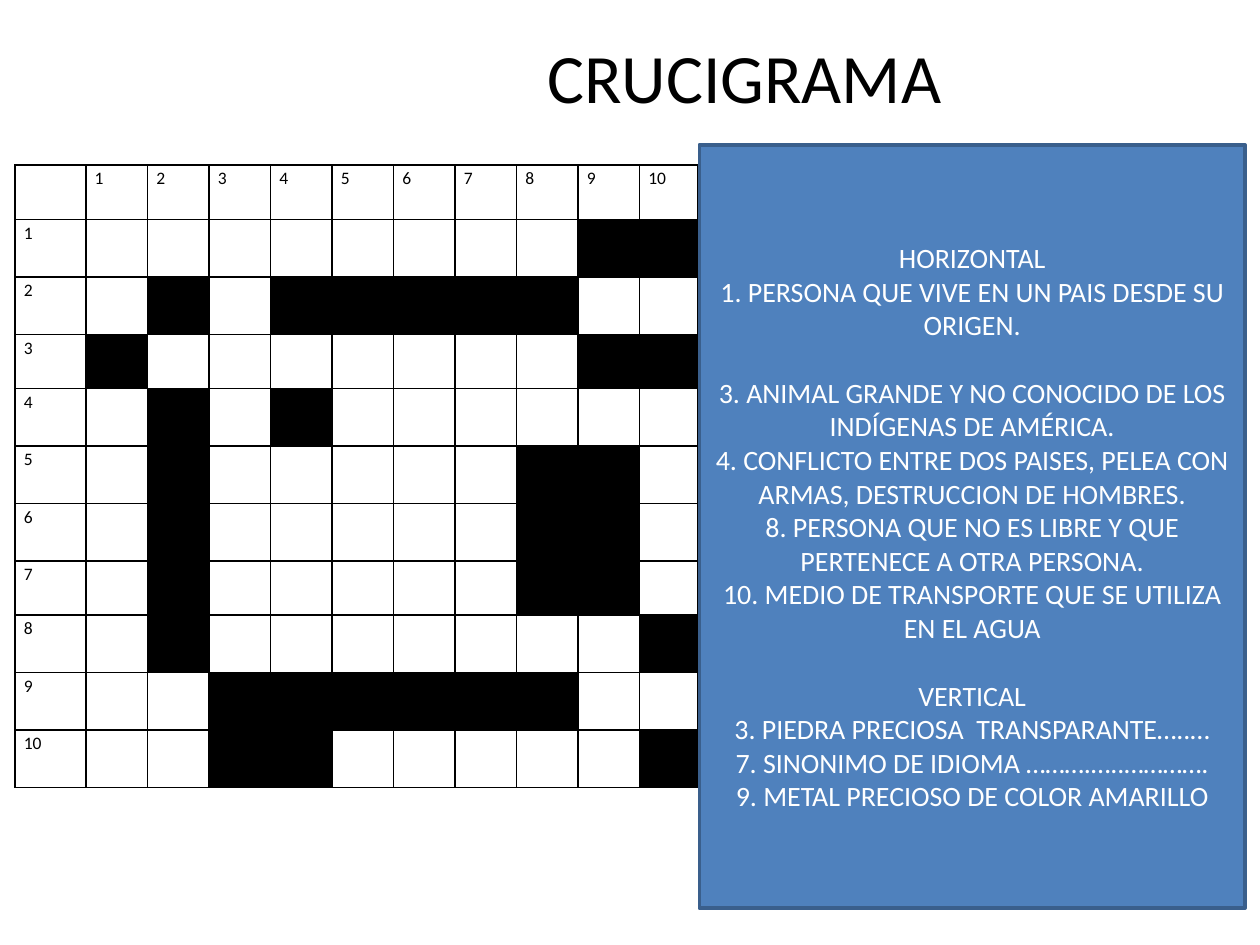
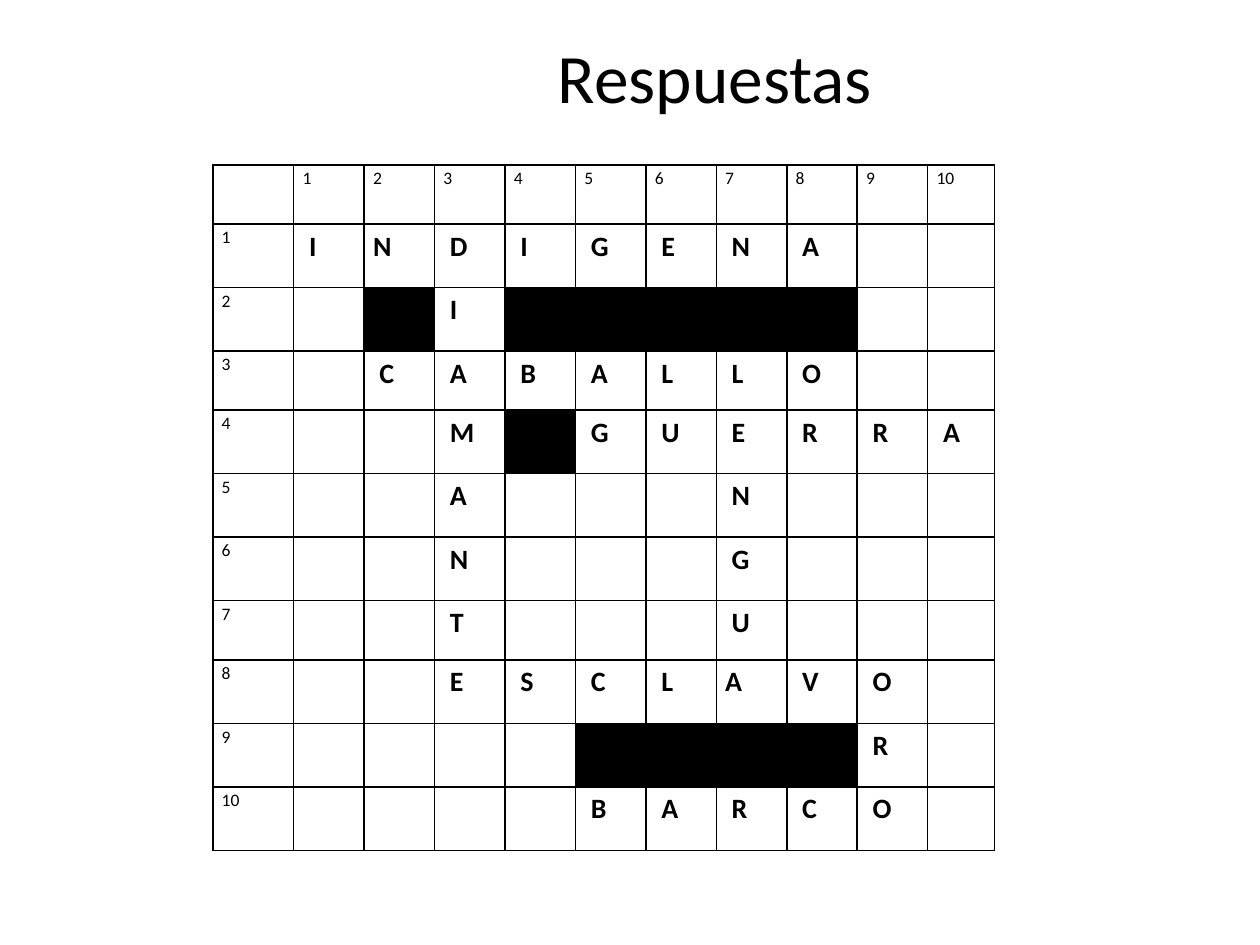
from lxml import etree
from pptx import Presentation
from pptx.dml.color import RGBColor
from pptx.enum import shapes, text
from pptx.oxml.ns import qn
from pptx.util import Cm, Pt

FONT = "Calibri"
BLACK, WHITE, BLUE, DARK_BLUE = "000000", "FFFFFF", "4F81BD", "3A5F8C"
BLACK_SQUARE, EMPTY_SQUARE = "#", "."
SHORT_ROWS = (0, 3, 7)
GRID_TOP = 3.33

CLUES = [
    ["HORIZONTAL",
     "1. PERSONA QUE VIVE EN UN PAIS DESDE SU ORIGEN."],
    ["3. ANIMAL GRANDE Y NO CONOCIDO DE LOS INDÍGENAS DE AMÉRICA.",
     "4. CONFLICTO ENTRE DOS PAISES, PELEA CON ARMAS, DESTRUCCION DE HOMBRES.",
     "8. PERSONA QUE NO ES LIBRE Y QUE PERTENECE A OTRA PERSONA.",
     "10. MEDIO DE TRANSPORTE QUE SE UTILIZA EN EL AGUA"],
    ["VERTICAL",
     "3. PIEDRA PRECIOSA  TRANSPARANTE…..…",
     "7. SINONIMO DE IDIOMA ……….…..………….",
     "9. METAL PRECIOSO DE COLOR AMARILLO"],
]

PUZZLE = {
    "title": "CRUCIGRAMA", "title_left": 5.89, "grid_left": 0.3,
    "columns": (1.43, 1.24, 1.17),  # number column, inner columns, last column
    "rows": (1.09, 1.16),  # short, tall
    "squares": [
        "........##",
        ".#.#####..",
        "#.......##",
        ".#.#......",
        ".#.....##.",
        ".#.....##.",
        ".#.....##.",
        ".#.......#",
        "..######..",
        "..##.....#",
    ],
    "flush": (), "clues": CLUES,
}
ANSWERS = {
    "title": "Respuestas", "title_left": 4.7, "grid_left": 4.29,
    "columns": (1.63, 1.42, 1.35),
    "rows": (1.19, 1.28),
    "squares": [
        "INDIGENA..",
        ".#I#####..",
        ".CABALLO..",
        "..M#GUERRA",
        "..A...N...",
        "..N...G...",
        "..T...U...",
        "..ESCLAVO.",
        "....####R.",
        "....BARCO.",
    ],
    "flush": ((1, 2), (8, 7)),  # letters set without the indent
    "clues": [],
}


def rgb(hex_color):
    return RGBColor.from_string(hex_color)


def style(paragraph, size, color=BLACK, bold=False):
    for run in paragraph.runs:
        run.font.name, run.font.size, run.font.bold = FONT, Pt(size), bold
        run.font.color.rgb = rgb(color)


def add_title(slide, title, left):
    box = slide.shapes.add_textbox(Cm(left), Cm(0.76), Cm(24.13 - left), Cm(1.55))
    frame = box.text_frame
    frame.word_wrap = True
    frame.vertical_anchor = text.MSO_ANCHOR.MIDDLE
    frame.text = title
    frame.paragraphs[0].alignment = text.PP_ALIGN.CENTER
    style(frame.paragraphs[0], 39.6)


def add_clues(slide, groups):
    panel = slide.shapes.add_shape(shapes.MSO_SHAPE.RECTANGLE,
                                   Cm(14.1), Cm(2.92), Cm(11), Cm(15.39))
    panel.shadow.inherit = False
    panel.fill.solid()
    panel.fill.fore_color.rgb = rgb(BLUE)
    panel.line.color.rgb = rgb(DARK_BLUE)
    panel.line.width = Pt(2)
    frame = panel.text_frame
    frame.word_wrap = True
    frame.vertical_anchor = text.MSO_ANCHOR.MIDDLE
    frame.text = "\n".join(clue for group in groups for clue in group)
    group_heads = [group[0] for group in groups[1:]]
    for paragraph in frame.paragraphs:
        paragraph.alignment = text.PP_ALIGN.CENTER
        if paragraph.text in group_heads:
            paragraph.space_before = Pt(19.5)
        style(paragraph, 16, WHITE)


def add_borders(cell):
    properties = cell._tc.get_or_add_tcPr()
    for position, side in enumerate(("lnL", "lnR", "lnT", "lnB")):
        line = etree.Element(qn(f"a:{side}"), w=str(Pt(1)))
        fill = etree.SubElement(line, qn("a:solidFill"))
        etree.SubElement(fill, qn("a:srgbClr"), val=BLACK)
        properties.insert(position, line)


def write(cell, content, size, bold=False, indent=0):
    cell.margin_left, cell.margin_right = Cm(0.18 + indent), Cm(0.18)
    cell.margin_top = cell.margin_bottom = 0
    cell.text_frame.text = content
    paragraph = cell.text_frame.paragraphs[0]
    paragraph.line_spacing = 1.15
    style(paragraph, size, bold=bold)


def add_crossword(slide, page):
    squares = page["squares"]
    count = len(squares) + 1
    first, inner, last = page["columns"]
    widths = [first] + [inner] * (count - 2) + [last]
    short, tall = page["rows"]
    heights = [short if row in SHORT_ROWS else tall for row in range(count)]
    grid = slide.shapes.add_table(count, count, Cm(page["grid_left"]), Cm(GRID_TOP),
                                  Cm(sum(widths)), Cm(sum(heights))).table
    grid.first_row = grid.horz_banding = False
    for column, width in zip(grid.columns, widths):
        column.width = Cm(width)
    for row, height in zip(grid.rows, heights):
        row.height = Cm(height)

    for row in range(count):
        for column in range(count):
            cell = grid.cell(row, column)
            cell.fill.background()
            add_borders(cell)
            if row == 0 or column == 0:
                if row != column:
                    write(cell, str(row + column), 10)
                continue
            square = squares[row - 1][column - 1]
            if square == BLACK_SQUARE:
                cell.fill.solid()
                cell.fill.fore_color.rgb = rgb(BLACK)
            elif square != EMPTY_SQUARE:
                indent = 0 if (row, column) in page["flush"] else 0.13
                write(cell, square, 16, bold=True, indent=indent)


def main():
    deck = Presentation()
    deck.slide_width, deck.slide_height = Cm(25.4), Cm(19.05)
    for page in (PUZZLE, ANSWERS):
        slide = deck.slides.add_slide(deck.slide_layouts[6])
        add_title(slide, page["title"], page["title_left"])
        if page["clues"]:
            add_clues(slide, page["clues"])
        add_crossword(slide, page)
    deck.save("out.pptx")


if __name__ == "__main__":
    main()
